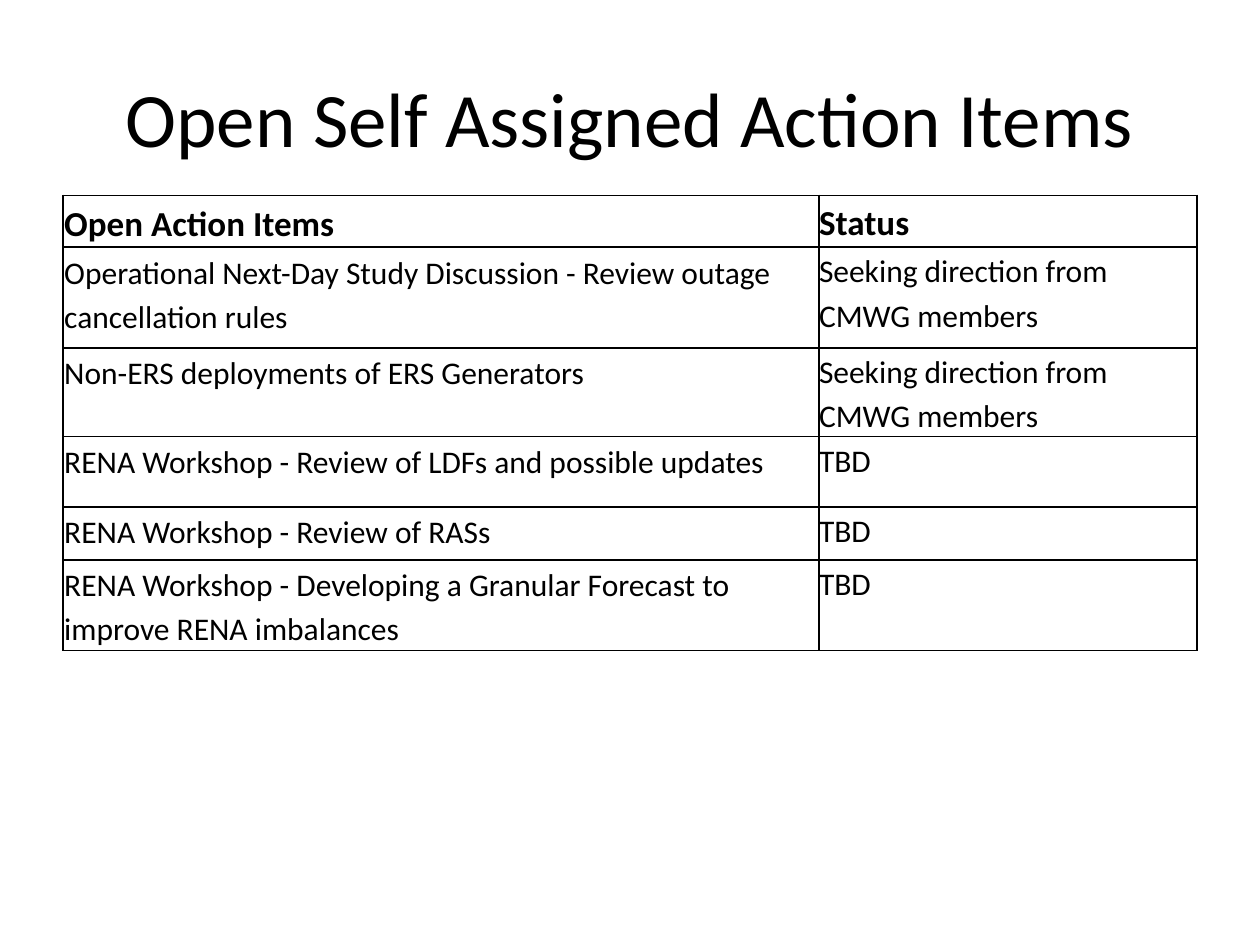
from dataclasses import dataclass

from lxml.etree import SubElement as Sub
from pptx import Presentation
from pptx.dml.color import RGBColor as Color
from pptx.enum.text import MSO_ANCHOR as Anchor, PP_ALIGN as Align
from pptx.oxml.ns import qn
from pptx.util import Inches, Pt


@dataclass(frozen=True)
class Theme:
    font: str = "Calibri"
    ink: str = "000000"
    title: int = 44
    head: int = 20
    body: int = 18
    rule: int = 1
    lead: float = 1.15


class Deck:
    def __init__(self, theme, slide):
        self.theme = theme
        self.slide = slide

    def style(self, para, size, bold=False):
        font = para.font
        font.name, font.size, font.bold = self.theme.font, Pt(size), bold
        font.color.rgb = Color.from_string(self.theme.ink)

    def title(self, text, box):
        shape = self.slide.shapes.title
        shape.left, shape.top, shape.width, shape.height = map(Inches, box)
        frame = shape.text_frame
        frame.text = text
        frame.vertical_anchor = Anchor.MIDDLE
        para = frame.paragraphs[0]
        para.alignment = Align.CENTER
        self.style(para, self.theme.title)

    def edge(self, cell):
        # Borders must come before the fill in the cell properties
        props = cell._tc.get_or_add_tcPr()
        for side in ("lnL", "lnR", "lnT", "lnB"):
            line = Sub(props, qn(f"a:{side}"), w=str(Pt(self.theme.rule)))
            fill = Sub(line, qn("a:solidFill"))
            Sub(fill, qn("a:srgbClr"), val=self.theme.ink)

    def cell(self, cell, text, size, bold, inset):
        cell.text = text
        cell.margin_left = cell.margin_right = Inches(inset)
        cell.margin_top = cell.margin_bottom = Inches(inset)
        cell.vertical_anchor = Anchor.TOP
        para = cell.text_frame.paragraphs[0]
        para.line_spacing = self.theme.lead
        self.style(para, size, bold)
        self.edge(cell)
        cell.fill.background()

    def table(self, rows, left, top, widths, heights, insets):
        frame = self.slide.shapes.add_table(
            len(rows), len(widths), Inches(left), Inches(top),
            Inches(sum(widths)), Inches(sum(heights)))
        grid = frame.table
        grid.horz_banding = False
        for col, width in zip(grid.columns, widths):
            col.width = Inches(width)
        for r, (row, height) in enumerate(zip(rows, heights)):
            grid.rows[r].height = Inches(height)
            head = r == 0
            size = self.theme.head if head else self.theme.body
            for c, text in enumerate(row):
                self.cell(grid.cell(r, c), text, size, head, insets[c])


SEEK = "Seeking direction from CMWG members"
ITEMS = [
    ("Open Action Items", "Status"),
    ("Operational Next-Day Study Discussion - Review outage "
     "cancellation rules", SEEK),
    ("Non-ERS deployments of ERS Generators", SEEK),
    ("RENA Workshop - Review of LDFs and possible updates", "TBD"),
    ("RENA Workshop - Review of RASs", "TBD"),
    ("RENA Workshop - Developing a Granular Forecast to "
     "improve RENA imbalances", "TBD"),
]


def main():
    show = Presentation()
    show.slide_width, show.slide_height = Inches(10), Inches(7.5)
    # Title-only layout
    deck = Deck(Theme(), show.slides.add_slide(show.slide_layouts[5]))

    # Heading
    deck.title("Open Self Assigned Action Items", (0.5, 0.3, 9, 1.25))

    # Action items and their status
    deck.table(ITEMS, 0.5, 1.55, widths=(6, 3),
               heights=(0.37, 0.8, 0.5, 0.56, 0.42, 0.72),
               insets=(0.01, 0))

    show.save("out.pptx")


if __name__ == "__main__":
    main()
